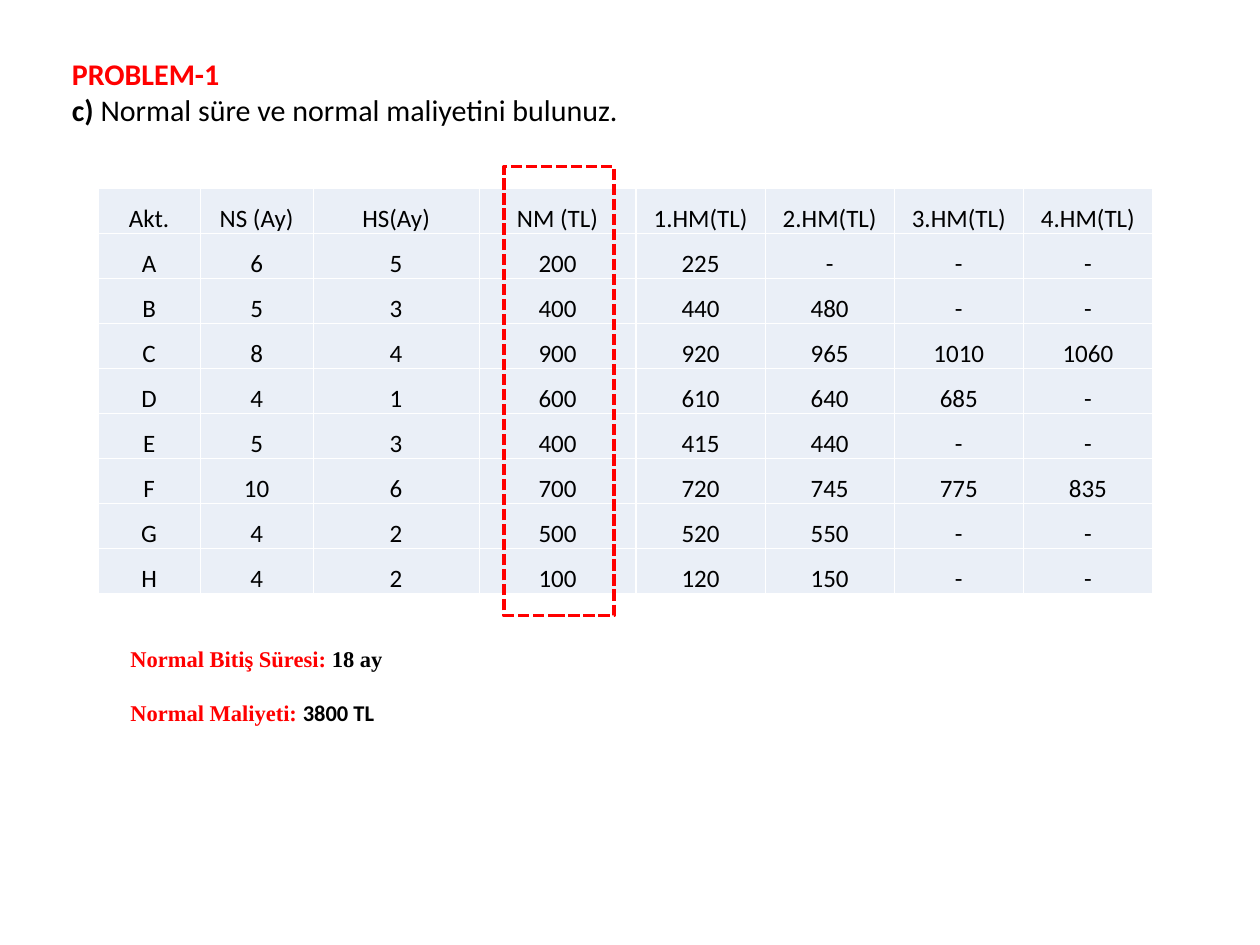
from dataclasses import dataclass

from lxml import etree
from pptx import Presentation
from pptx.dml.color import RGBColor
from pptx.enum.dml import MSO_LINE
from pptx.enum.shapes import MSO_SHAPE
from pptx.enum.text import MSO_ANCHOR, PP_ALIGN
from pptx.oxml import parse_xml
from pptx.oxml.ns import nsdecls
from pptx.util import Pt

CENTER, JUSTIFY, LEFT = PP_ALIGN.CENTER, PP_ALIGN.JUSTIFY, PP_ALIGN.LEFT
TOP, MIDDLE = MSO_ANCHOR.TOP, MSO_ANCHOR.MIDDLE
DASH = MSO_LINE.SQUARE_DOT
RECTANGLE = MSO_SHAPE.RECTANGLE


@dataclass(frozen=True)
class Theme:
    red: str = "FF0000"
    black: str = "000000"
    white: str = "FFFFFF"
    cell: str = "EAEFF7"
    sans: str = "Calibri"
    serif: str = "Times New Roman"
    heading: int = 24
    table: int = 20
    answer: int = 18


theme = Theme()


def add_text(paragraph, text, *, size, font=theme.sans, color=theme.black, bold=False):
    run = paragraph.add_run()
    run.text = text
    run.font.size = Pt(size)
    run.font.name = font
    run.font.bold = bold
    run.font.color.rgb = RGBColor.from_string(color)


def add_text_frame(slide, left, top, width, height, anchor):
    """Add a wrapping text box and return its text frame."""
    frame = slide.shapes.add_textbox(Pt(left), Pt(top), Pt(width), Pt(height)).text_frame
    frame.word_wrap = True
    frame.vertical_anchor = anchor
    return frame


presentation = Presentation()
presentation.slide_width = Pt(1008)
presentation.slide_height = Pt(756)
slide = presentation.slides.add_slide(presentation.slide_layouts[6])

# Problem statement
statement = add_text_frame(slide, 50.4, 41, 928.8, 94.3, TOP)
paragraph = statement.paragraphs[0]
paragraph.alignment = JUSTIFY
add_text(paragraph, "PROBLEM-1", size=theme.heading, color=theme.red, bold=True)
paragraph = statement.add_paragraph()
paragraph.alignment = LEFT
add_text(paragraph, "c)", size=theme.heading, bold=True)
add_text(paragraph, " Normal süre ve normal maliyetini bulunuz.", size=theme.heading)

# Activity table
activities = [
    ["Akt.", "NS (Ay)", "HS(Ay)", "NM (TL)", "1.HM(TL)", "2.HM(TL)", "3.HM(TL)", "4.HM(TL)"],
    ["A", "6", "5", "200", "225", "-", "-", "-"],
    ["B", "5", "3", "400", "440", "480", "-", "-"],
    ["C", "8", "4", "900", "920", "965", "1010", "1060"],
    ["D", "4", "1", "600", "610", "640", "685", "-"],
    ["E", "5", "3", "400", "415", "440", "-", "-"],
    ["F", "10", "6", "700", "720", "745", "775", "835"],
    ["G", "4", "2", "500", "520", "550", "-", "-"],
    ["H", "4", "2", "100", "120", "150", "-", "-"],
]
column_widths = [81.6, 90.4, 132.8, 125.6] + [103.3] * 4
row_height = 28.2

table = slide.shapes.add_table(
    len(activities), len(column_widths), Pt(78.5), Pt(150.6),
    Pt(sum(column_widths)), Pt(row_height * len(activities)),
).table
table.first_row = False
table.horz_banding = False
for column, width in zip(table.columns, column_widths):
    column.width = Pt(width)
for row, values in zip(table.rows, activities):
    row.height = Pt(row_height)
    for cell, value in zip(row.cells, values):
        cell.margin_left = cell.margin_right = Pt(10)
        cell.margin_top = cell.margin_bottom = Pt(0)
        cell.vertical_anchor = MIDDLE
        properties = cell._tc.get_or_add_tcPr()
        for side in ("lnL", "lnR", "lnT", "lnB"):
            border = parse_xml(f'<a:{side} {nsdecls("a")} w="{Pt(1)}"/>')
            fill = etree.SubElement(border, border.tag.replace(side, "solidFill"))
            etree.SubElement(fill, border.tag.replace(side, "srgbClr"), val=theme.white)
            properties.append(border)
        cell.fill.solid()
        cell.fill.fore_color.rgb = RGBColor.from_string(theme.cell)
        paragraph = cell.text_frame.paragraphs[0]
        paragraph.alignment = CENTER
        paragraph.line_spacing = 1.5
        paragraph.space_after = Pt(10)
        add_text(paragraph, value, size=theme.table)

# Frame around the normal cost column
cost_frame = slide.shapes.add_shape(RECTANGLE, Pt(403.2), Pt(133.2), Pt(87.8), Pt(359.3))
cost_frame.shadow.inherit = False
cost_frame.fill.background()
cost_frame.line.color.rgb = RGBColor.from_string(theme.red)
cost_frame.line.width = Pt(3)
cost_frame.line.dash_style = DASH

# Answers
answers = [
    ("Normal Bitiş Süresi: ", "18 ay", theme.serif),
    ("Normal Maliyeti: ", "3800 TL", theme.sans),
]
answer_frame = add_text_frame(slide, 97.2, 512, 588.2, 72.7, MIDDLE)
for index, (label, value, value_font) in enumerate(answers):
    paragraph = answer_frame.add_paragraph() if index else answer_frame.paragraphs[0]
    paragraph.alignment = JUSTIFY
    if index:
        paragraph.space_before = Pt(22)
    add_text(paragraph, label, size=theme.answer, font=theme.serif, color=theme.red, bold=True)
    add_text(paragraph, value, size=theme.answer, font=value_font, bold=True)

presentation.save("out.pptx")
